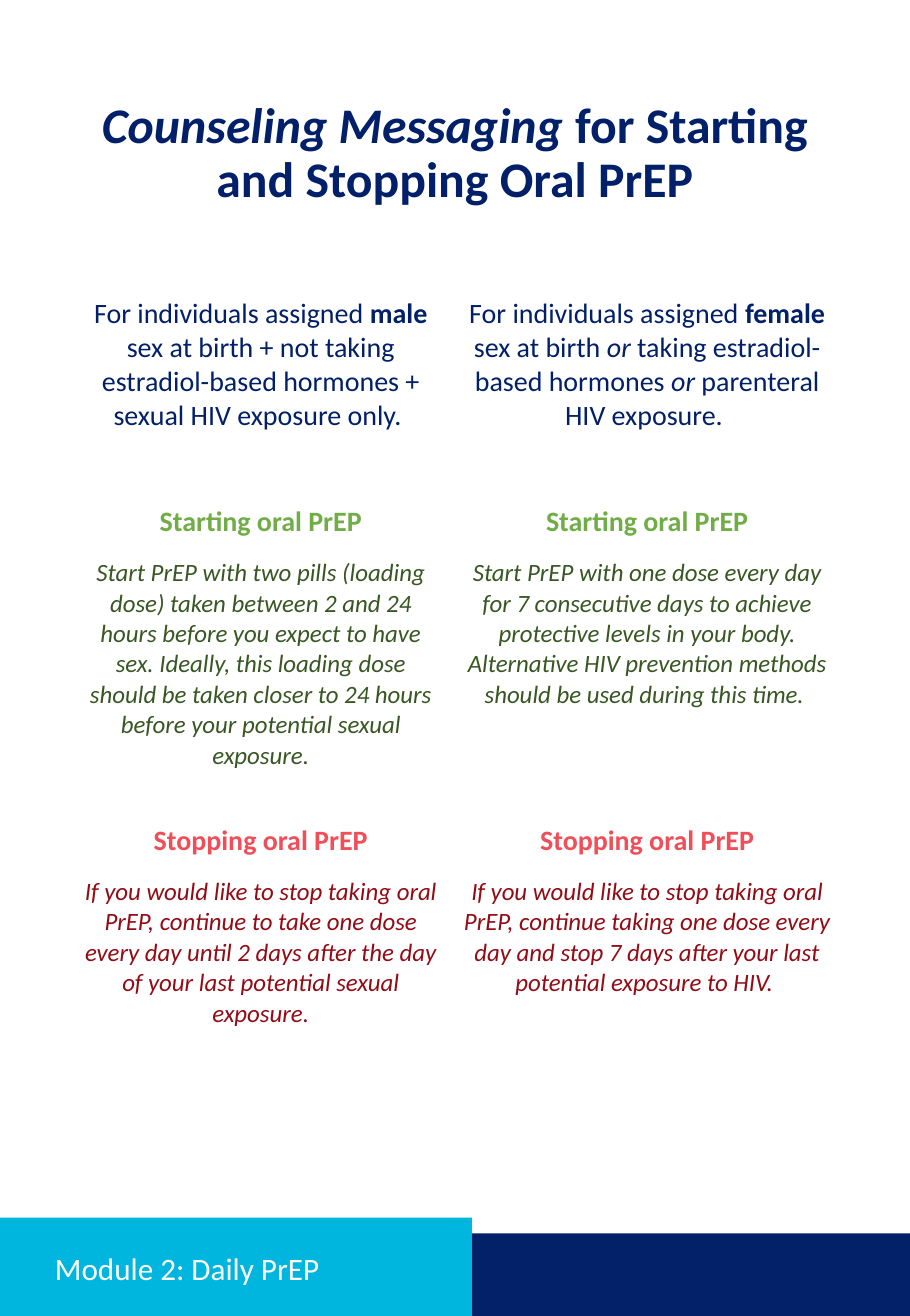
from pptx import Presentation
from pptx.dml.color import RGBColor
from pptx.enum.shapes import MSO_SHAPE
from pptx.enum.text import MSO_ANCHOR, MSO_AUTO_SIZE, PP_ALIGN
from pptx.oxml.ns import qn
from pptx.util import Pt

NAVY = RGBColor(0x02, 0x20, 0x69)
BAND_NAVY = RGBColor(0x02, 0x21, 0x69)
CYAN = RGBColor(0x00, 0xB5, 0xDE)
WHITE = RGBColor(0xFF, 0xFF, 0xFF)
GREEN = RGBColor(0x70, 0xAD, 0x47)
DARK_GREEN = RGBColor(0x38, 0x57, 0x23)
CORAL = RGBColor(0xF0, 0x4E, 0x58)
DARK_RED = RGBColor(0x93, 0x0C, 0x15)

FONT = "Calibri"
WIDTH, HEIGHT = 585, 846

MODULE = [("Module 2: Daily PrEP", "")]
HEADING = [("Counseling Messaging ", "bi"), ("for Starting and Stopping Oral PrEP", "b")]
AUDIENCES = [
    [
        ("For individuals assigned ", ""),
        ("male", "b"),
        (" sex at birth + not taking estradiol-based hormones + sexual HIV exposure only. ", ""),
    ],
    [
        ("For individuals assigned ", ""),
        ("female", "b"),
        (" sex at birth", ""),
        (" or ", "i"),
        ("taking estradiol-based hormones ", ""),
        ("or", "i"),
        (" parenteral HIV exposure. ", ""),
    ],
]
ADVICE = [
    ("Starting oral PrEP", GREEN, DARK_GREEN, [
        "Start PrEP with two pills (loading dose) taken between 2 and 24 hours before you "
        "expect to have sex. Ideally, this loading dose should be taken closer to 24 hours "
        "before your potential sexual exposure.",
        "Start PrEP with one dose every day for 7 consecutive days to achieve protective "
        "levels in your body. Alternative HIV prevention methods should be used during "
        "this time. ",
    ]),
    ("Stopping oral PrEP", CORAL, DARK_RED, [
        "If you would like to stop taking oral PrEP, continue to take one dose every day "
        "until 2 days after the day of your last potential sexual exposure.",
        "If you would like to stop taking oral PrEP, continue taking one dose every day "
        "and stop 7 days after your last potential exposure to HIV. ",
    ]),
]
COLUMN_WIDTHS = [245.5, 251.3]
ROW_HEIGHTS = [133.9, 205, 160.6]
SPLIT = 303.4
BANDS = [(SPLIT, 792.9, WIDTH - SPLIT, BAND_NAVY), (0, 782.8, SPLIT, CYAN)]


def write(paragraph, runs, size, color, align=PP_ALIGN.CENTER, before=0, after=0, spacing=1.0):
    paragraph.alignment = align
    paragraph.space_before = Pt(before)
    paragraph.space_after = Pt(after)
    paragraph.line_spacing = spacing
    for text, style in runs:
        run = paragraph.add_run()
        run.text = text
        run.font.name = FONT
        run.font.size = Pt(size)
        run.font.color.rgb = color
        run.font.bold = "b" in style
        run.font.italic = "i" in style


def place(shape, left, top, width, height, anchor):
    shape.left, shape.top, shape.width, shape.height = Pt(left), Pt(top), Pt(width), Pt(height)
    frame = shape.text_frame
    frame.word_wrap = True
    frame.auto_size = MSO_AUTO_SIZE.NONE
    frame.vertical_anchor = anchor
    return frame.paragraphs[0]


def add_bands(slide, title):
    for left, top, width, color in BANDS:
        band = slide.shapes.add_shape(
            MSO_SHAPE.RECTANGLE, Pt(left), Pt(top), Pt(width), Pt(HEIGHT - top))
        band.shadow.inherit = False
        band.fill.solid()
        band.fill.fore_color.rgb = color
        band.line.fill.background()
        title.element.addprevious(band.element)


def add_messages(slide):
    table = slide.shapes.add_table(
        len(ROW_HEIGHTS), len(COLUMN_WIDTHS), Pt(44.9), Pt(187.2),
        Pt(sum(COLUMN_WIDTHS)), Pt(sum(ROW_HEIGHTS))).table
    table.first_row = table.horz_banding = False
    for column, width in zip(table.columns, COLUMN_WIDTHS):
        column.width = Pt(width)
    for row, height in zip(table.rows, ROW_HEIGHTS):
        row.height = Pt(height)
    for cell in table.iter_cells():
        cell.fill.background()
    for column, runs in enumerate(AUDIENCES):
        write(table.cell(0, column).text_frame.paragraphs[0], runs, 18, NAVY, after=6)
    for row, (label, label_color, message_color, messages) in enumerate(ADVICE, 1):
        for column, message in enumerate(messages):
            frame = table.cell(row, column).text_frame
            write(frame.paragraphs[0], [(label, "b")], 18, label_color, after=6)
            write(frame.add_paragraph(), [(message, "i")], 16, message_color, before=6, after=6)


def main():
    presentation = Presentation()
    presentation.slide_width, presentation.slide_height = Pt(WIDTH), Pt(HEIGHT)
    slide = presentation.slides.add_slide(presentation.slide_layouts[1])
    title, body = slide.shapes.title, slide.placeholders[1]
    add_bands(slide, title)

    heading = place(body, 44.1, 61.2, 496.8, 95, MSO_ANCHOR.TOP)
    properties = heading._p.get_or_add_pPr()
    properties.set("marL", "0")
    properties.set("indent", "0")
    properties.append(properties.makeelement(qn("a:buNone"), {}))
    write(heading, HEADING, 32, NAVY, spacing=0.9)

    add_messages(slide)

    module = place(title, 28.1, 800.6, 253.4, 32.4, MSO_ANCHOR.MIDDLE)
    write(module, MODULE, 20, WHITE, align=PP_ALIGN.LEFT, spacing=0.9)
    presentation.save("out.pptx")


if __name__ == "__main__":
    main()
